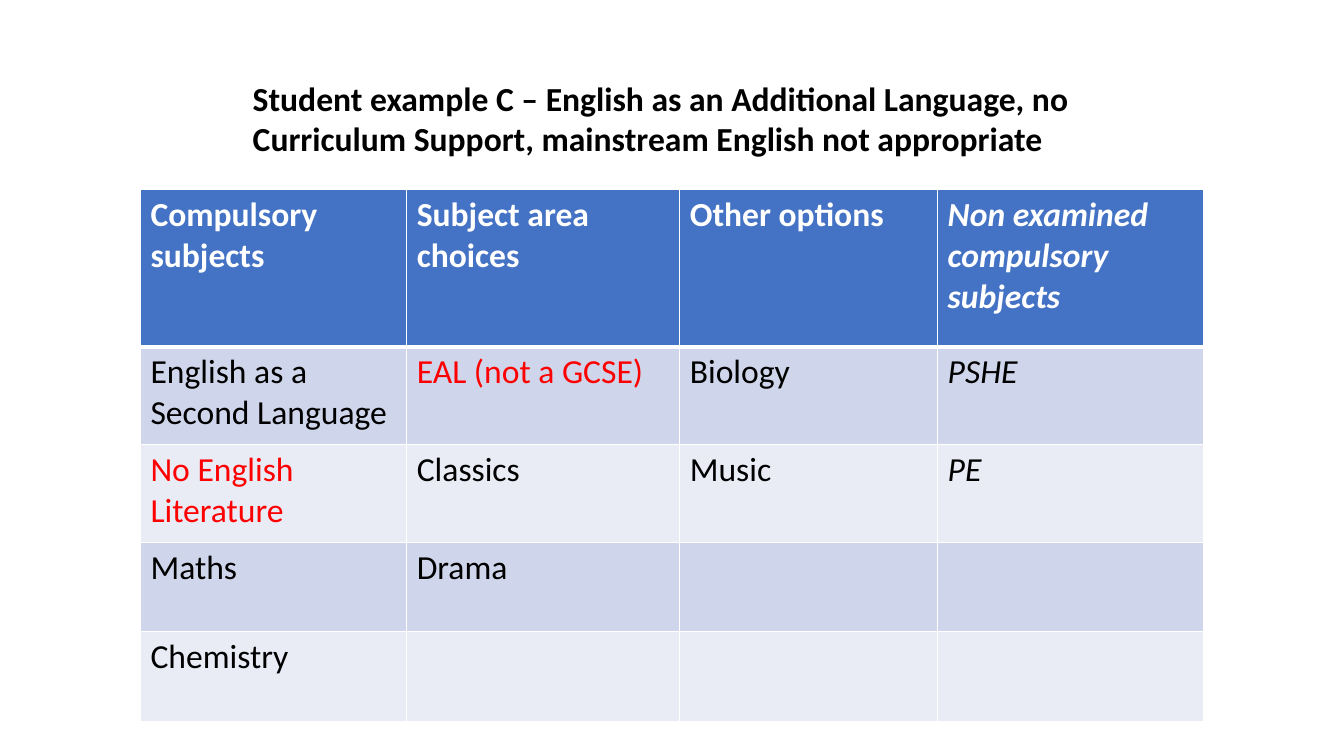
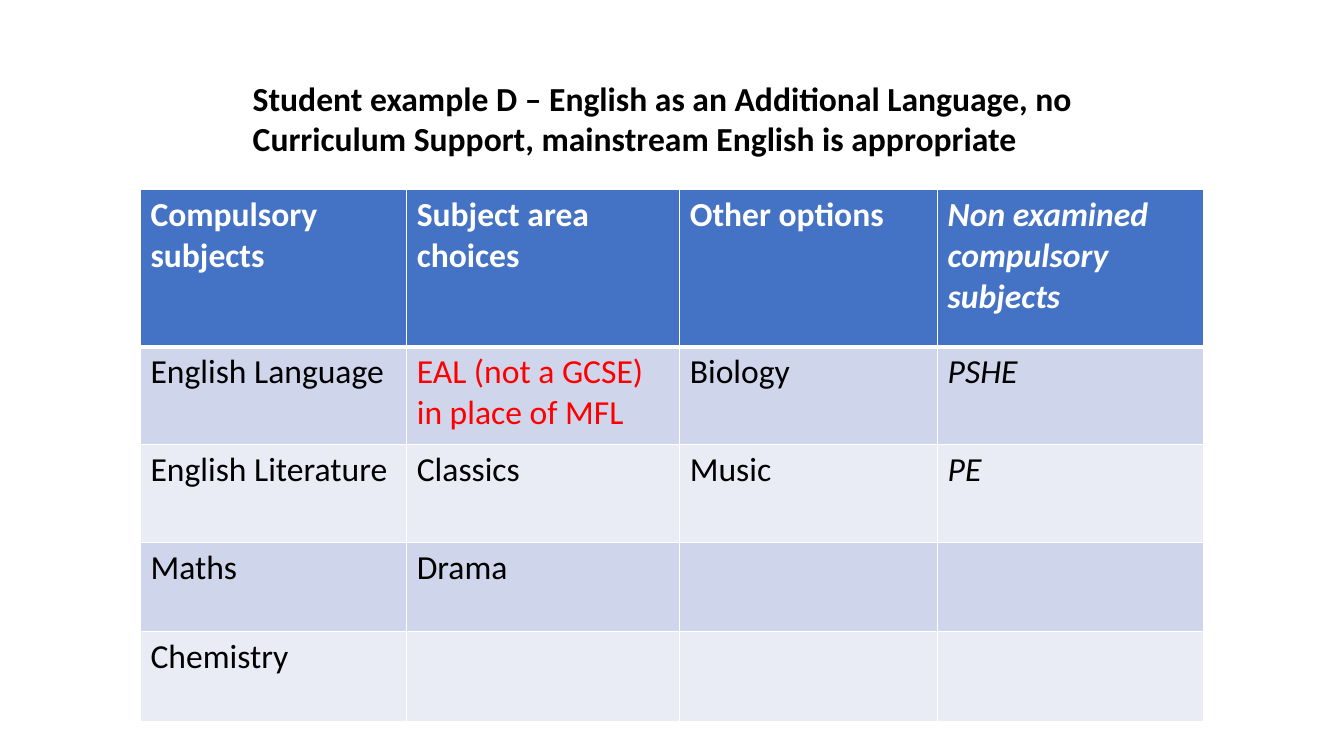
from dataclasses import dataclass

import lxml.etree
import pptx
import pptx.dml.color
import pptx.enum.text
import pptx.oxml.ns
import pptx.slide
import pptx.table
import pptx.text.text
import pptx.util

Cm = pptx.util.Cm
Pt = pptx.util.Pt

HUES = {
    "head": "4472C4",
    "dark": "CFD5EA",
    "light": "E9EBF5",
    "white": "FFFFFF",
    "black": "000000",
    "red": "FF0000",
}
FONT = "Calibri"
SIZE = Pt(24)
COLS = (6.71, 6.88, 6.5, 6.71)
ROWS = (3.96, 2.46, 2.46, 2.26, 2.26)
HEADS = (
    "Compulsory subjects",
    "Subject area choices",
    "Other options",
    "Non examined compulsory subjects",
)


@dataclass(frozen=True)
class Plan:
    """One student's subjects, by column; those in red are exceptions."""

    title: str
    core: tuple[str, ...]
    area: tuple[str, ...]
    red: tuple[str, ...]
    other: tuple[str, ...] = ("Biology", "Music")
    extra: tuple[str, ...] = ("PSHE", "PE")


PLANS = (
    Plan(
        title="Student example C – English as an Additional Language, no "
        "Curriculum Support, mainstream English not appropriate",
        core=("English as a Second Language", "No English Literature", "Maths", "Chemistry"),
        area=("EAL (not a GCSE)", "Classics", "Drama"),
        red=("EAL (not a GCSE)", "No English Literature"),
    ),
    Plan(
        title="Student example D – English as an Additional Language, no "
        "Curriculum Support, mainstream English is appropriate",
        core=("English Language", "English Literature", "Maths", "Chemistry"),
        area=("EAL (not a GCSE) in place of MFL", "Classics", "Drama"),
        red=("EAL (not a GCSE) in place of MFL",),
    ),
)


def shade(hue: str) -> pptx.dml.color.RGBColor:
    return pptx.dml.color.RGBColor.from_string(HUES[hue])


def write(
    frame: pptx.text.text.TextFrame,
    text: str,
    hue: str = "black",
    bold: bool = False,
    slant: bool = False,
) -> None:
    frame.text = text
    for run in frame.paragraphs[0].runs:
        font = run.font
        font.name, font.size = FONT, SIZE
        font.bold, font.italic = bold, slant
        font.color.rgb = shade(hue)


def edge(cell: pptx.table._Cell, top: int, base: int) -> None:
    """Draw white cell borders, with top and base widths in points."""
    qn = pptx.oxml.ns.qn
    props = cell._tc.get_or_add_tcPr()
    sides = (("lnL", 1), ("lnR", 1), ("lnT", top), ("lnB", base))
    for spot, (tag, width) in enumerate(sides):
        line = lxml.etree.Element(qn(f"a:{tag}"), w=str(Pt(width)))
        fill = lxml.etree.SubElement(line, qn("a:solidFill"))
        lxml.etree.SubElement(fill, qn("a:srgbClr"), val=HUES["white"])
        props.insert(spot, line)


def add_title(slide: pptx.slide.Slide, text: str) -> None:
    box = slide.shapes.add_textbox(Cm(6.12), Cm(1.83), Cm(21.29), Cm(2.31))
    frame = box.text_frame
    frame.word_wrap = True
    frame.auto_size = pptx.enum.text.MSO_AUTO_SIZE.SHAPE_TO_FIT_TEXT
    write(frame, text, bold=True)


def add_grid(slide: pptx.slide.Slide, plan: Plan) -> None:
    grid = slide.shapes.add_table(
        len(ROWS), len(COLS), Cm(3.54), Cm(4.78), Cm(sum(COLS)), Cm(sum(ROWS))
    ).table
    for row, high in zip(grid.rows, ROWS):
        row.height = Cm(high)
    lists = (plan.core, plan.area, plan.other, plan.extra)
    for x, (wide, head, items) in enumerate(zip(COLS, HEADS, lists)):
        grid.columns[x].width = Cm(wide)
        slant = items is plan.extra
        for y in range(len(ROWS)):
            cell = grid.cell(y, x)
            cell.fill.solid()
            if y == 0:
                cell.fill.fore_color.rgb = shade("head")
                write(cell.text_frame, head, "white", bold=True, slant=slant)
            else:
                cell.fill.fore_color.rgb = shade("dark" if y % 2 else "light")
                if y <= len(items):
                    text = items[y - 1]
                    hue = "red" if text in plan.red else "black"
                    write(cell.text_frame, text, hue, slant=slant)
            edge(cell, top=3 if y == 1 else 1, base=3 if y == 0 else 1)


def main() -> None:
    deck = pptx.Presentation()
    deck.slide_width, deck.slide_height = Cm(33.87), Cm(19.05)
    blank = deck.slide_layouts[6]
    for plan in PLANS:
        slide = deck.slides.add_slide(blank)
        add_grid(slide, plan)
        add_title(slide, plan.title)
    deck.save("out.pptx")


if __name__ == "__main__":
    main()
